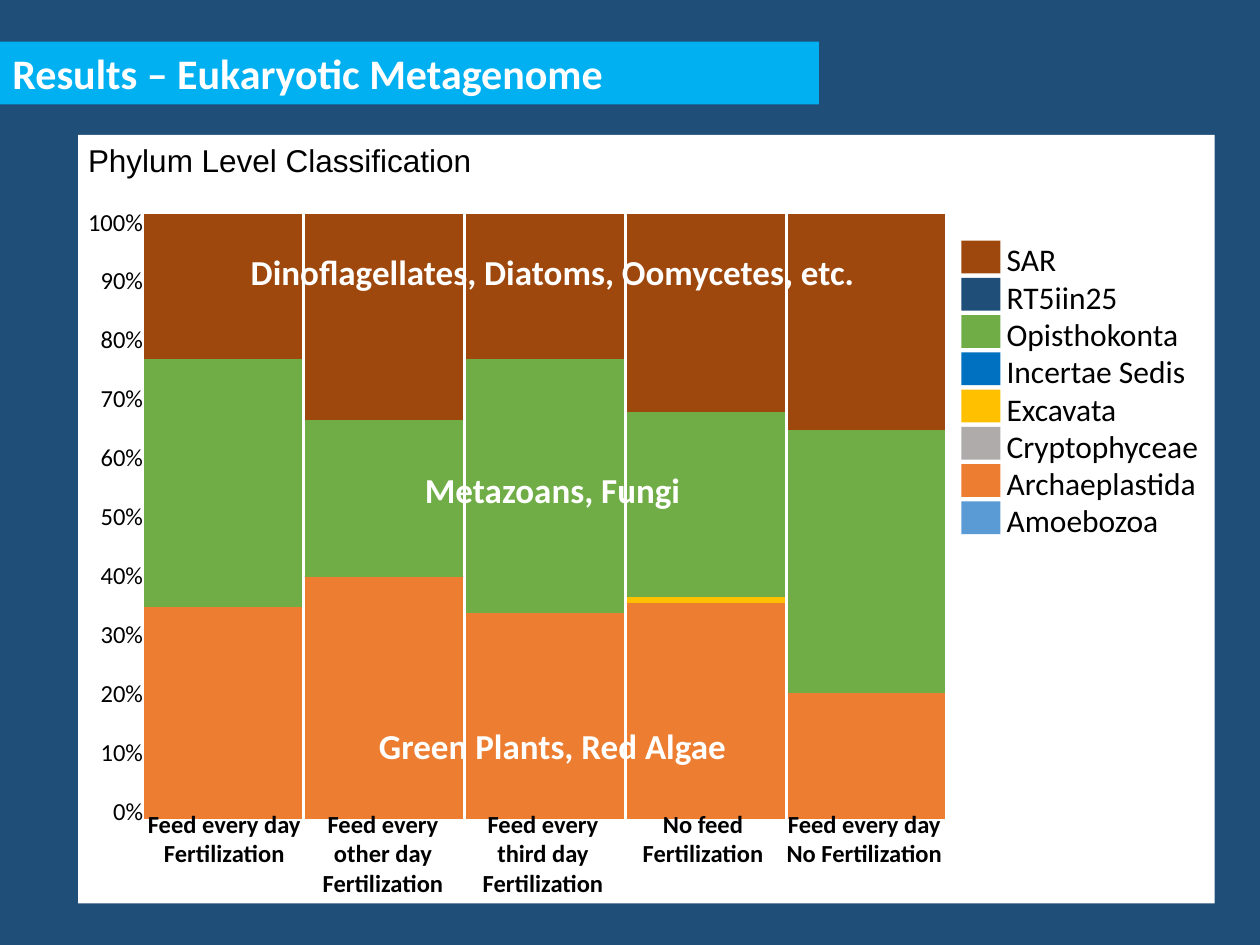
import pptx
import pptx.chart.data
import pptx.enum.chart
import pptx.enum.shapes
import pptx.enum.text
import pptx.oxml
import pptx.util
from pptx.dml.color import RGBColor
from pptx.util import Inches

NAVY = RGBColor(0x1F, 0x4E, 0x79)
SKY = RGBColor(0x00, 0xB0, 0xF0)
WHITE = RGBColor(0xFF, 0xFF, 0xFF)
BLACK = RGBColor(0x00, 0x00, 0x00)
BROWN = RGBColor(0x9E, 0x48, 0x0E)
GREEN = RGBColor(0x70, 0xAD, 0x47)
BLUE = RGBColor(0x00, 0x70, 0xC0)
GOLD = RGBColor(0xFF, 0xC0, 0x00)
SILVER = RGBColor(0xAF, 0xAB, 0xAB)
ORANGE = RGBColor(0xED, 0x7D, 0x31)
LIGHT_BLUE = RGBColor(0x5B, 0x9B, 0xD5)
GRAY = RGBColor(0xA5, 0xA5, 0xA5)
INDIGO = RGBColor(0x44, 0x72, 0xC4)
TEAL = RGBColor(0x25, 0x5E, 0x91)
DARK_GRAY = RGBColor(0x63, 0x63, 0x63)

LEFT = pptx.enum.text.PP_ALIGN.LEFT
CENTER = pptx.enum.text.PP_ALIGN.CENTER

prs = pptx.Presentation()
prs.slide_width, prs.slide_height = Inches(10), Inches(7.5)
s = prs.slides.add_slide(prs.slide_layouts[6])
s.background.fill.solid()
s.background.fill.fore_color.rgb = NAVY


def add_text(text, x, y, w, h, size=18, color=BLACK, bold=False,
             align=LEFT, font="Calibri", fill=None):
    """Add a text box, or a filled rectangle when fill is given; lines become paragraphs."""
    box = [Inches(v) for v in (x, y, w, h)]
    if fill is None:
        sp = s.shapes.add_textbox(*box)
    else:
        sp = s.shapes.add_shape(pptx.enum.shapes.MSO_SHAPE.RECTANGLE, *box)
        sp.shadow.inherit = False
        sp.fill.solid()
        sp.fill.fore_color.rgb = fill
        sp.line.fill.background()
    tf = sp.text_frame
    tf.word_wrap = True
    if not text:
        return
    tf.auto_size = pptx.enum.text.MSO_AUTO_SIZE.SHAPE_TO_FIT_TEXT
    for i, line in enumerate(text.split("\n")):
        p = tf.paragraphs[0] if i == 0 else tf.add_paragraph()
        p.alignment = align
        r = p.add_run()
        r.text = line
        r.font.name = font
        r.font.size = pptx.util.Pt(size)
        r.font.bold = bold
        r.font.color.rgb = color


# White panel behind the chart
add_text("", 0.62, 1.07, 9.02, 6.1, fill=WHITE)

# Stacked chart
series = [
    ((0, 0, 0, 0, 0), LIGHT_BLUE),
    ((35, 40, 34, 36, 21), ORANGE),
    ((0, 0, 0, 0, 0), GRAY),
    ((0, 0, 0, 1, 0), GOLD),
    ((0, 0, 0, 0, 0), INDIGO),
    ((41, 26, 42, 31, 44), GREEN),
    ((0, 0, 0, 0, 0), TEAL),
    ((24, 34, 24, 33, 36), BROWN),
    ((0, 0, 0, 0, 0), DARK_GRAY),
]
data = pptx.chart.data.CategoryChartData()
data.categories = ["1", "2", "3", "4", "5"]
for n, (values, _) in enumerate(series, 1):
    data.add_series(f"Series {n}", values)
chart = s.shapes.add_chart(
    pptx.enum.chart.XL_CHART_TYPE.COLUMN_STACKED_100,
    Inches(1), Inches(1.6), Inches(6.65), Inches(5), data).chart
chart.has_legend = False
chart.has_title = False
chart.font.name = "Calibri"
chart.font.size = pptx.util.Pt(10)
chart.font.color.rgb = BLACK
chart.value_axis.has_major_gridlines = False
chart.value_axis.minimum_scale = 0
chart.value_axis.maximum_scale = 1
chart.value_axis.visible = False
chart.category_axis.visible = False
plot = chart.plots[0]
plot.gap_width = 2
plot.overlap = 100
plot.vary_by_categories = False
for ser, (_, color) in zip(plot.series, series):
    ser.format.fill.solid()
    ser.format.fill.fore_color.rgb = color

# Fix the plot area so that it lines up with the labels around it
plot_area = chart.element.chart.plotArea
for old in plot_area.findall("{*}layout"):
    plot_area.remove(old)
plot_area.insert(0, pptx.oxml.parse_xml(
    '<c:layout xmlns:c="http://schemas.openxmlformats.org/drawingml/2006/chart">'
    '<c:manualLayout><c:layoutTarget val="inner"/>'
    '<c:xMode val="edge"/><c:yMode val="edge"/>'
    '<c:x val="0.02"/><c:y val="0.02"/><c:w val="0.96"/><c:h val="0.96"/>'
    '</c:manualLayout></c:layout>'))

# Legend
legend = [
    ("SAR", BROWN), ("RT5iin25", NAVY), ("Opisthokonta", GREEN),
    ("Incertae Sedis", BLUE), ("Excavata", GOLD), ("Cryptophyceae", SILVER),
    ("Archaeplastida", ORANGE), ("Amoebozoa", LIGHT_BLUE),
]
for i, (name, color) in enumerate(legend):
    offset = i * 2.07 / 7
    add_text("", 7.63, 1.91 + offset, 0.31, 0.26, fill=color)
    add_text(name, 7.89, 1.86 + offset, 2.02, 0.4)

# Percent scale: shorter labels start further right
for i in range(11):
    label = f"{100 - 10 * i}%"
    add_text(label, 1 - 0.1 * len(label), 1.59 + 0.468 * i, 0.65, 0.34, size=14)

# Headings
add_text("Results – Eukaryotic Metagenome", 0, 0.33, 6.5, 0.5, size=24,
         color=WHITE, bold=True, fill=SKY)
add_text("Phylum Level Classification", 0.6, 1.07, 5.15, 0.4, font="Arial")

# Treatment labels under the columns
treatments = [
    ("Feed every day\nFertilization", 1.07, 1.42, 0.57),
    ("Feed every other day\nFertilization", 2.41, 1.26, 0.81),
    ("Feed every third day\nFertilization", 3.68, 1.26, 0.81),
    ("No feed\nFertilization", 4.95, 1.26, 0.57),
    ("Feed every day No Fertilization", 6.14, 1.44, 0.57),
]
for text, x, w, h in treatments:
    add_text(text, x, 6.37, w, h, size=14, bold=True, align=CENTER)

# Names of the groups, across the columns
for text, y in [("Dinoflagellates, Diatoms, Oomycetes, etc.", 1.94),
                ("Metazoans, Fungi", 3.67),
                ("Green Plants, Red Algae", 5.7)]:
    add_text(text, 1.89, y, 4.99, 0.44, size=20, color=WHITE, bold=True, align=CENTER)

prs.save("out.pptx")
